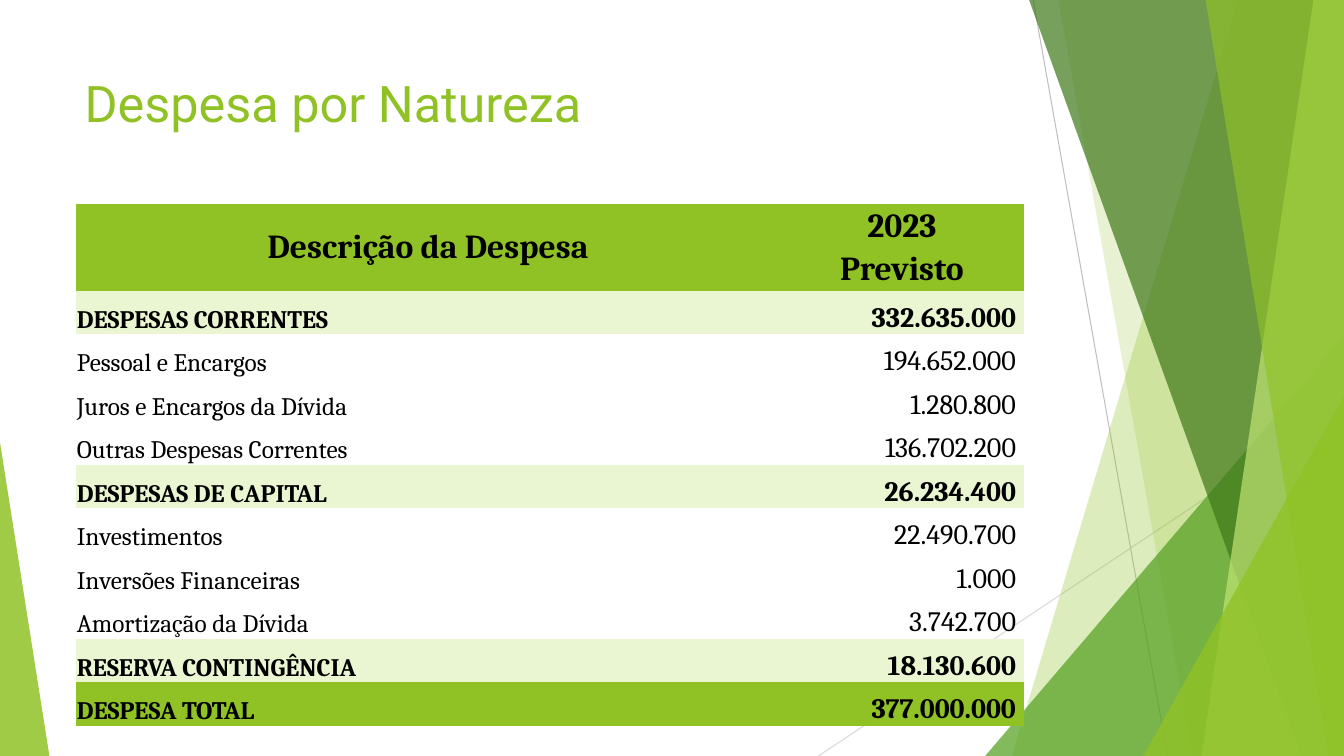
from dataclasses import dataclass
from typing import Any, NamedTuple, Optional

from lxml import etree
from pptx import Presentation
from pptx.dml.color import RGBColor
from pptx.enum.shapes import MSO_CONNECTOR, MSO_SHAPE
from pptx.enum.text import MSO_ANCHOR, PP_ALIGN
from pptx.oxml.ns import qn
from pptx.util import Pt

STRAIGHT = MSO_CONNECTOR.STRAIGHT
TRIANGLE = MSO_SHAPE.ISOSCELES_TRIANGLE
TOP, MIDDLE, BOTTOM = MSO_ANCHOR.TOP, MSO_ANCHOR.MIDDLE, MSO_ANCHOR.BOTTOM
LEFT, CENTER, RIGHT = PP_ALIGN.LEFT, PP_ALIGN.CENTER, PP_ALIGN.RIGHT

SLIDE_W, SLIDE_H = 960, 540
TITLE_ONLY = 5
NO_STYLE_NO_GRID = "{2D5ABB26-0587-4C30-8999-92F81FD0307C}"


@dataclass(frozen=True)
class Theme:
    green: str = "90C226"
    leaf: str = "54A021"
    forest: str = "3F7819"
    lime: str = "C0E474"
    pale: str = "EAF6D1"
    text: str = "000000"
    gray: str = "BFBFBF"
    light_gray: str = "D9D9D9"
    title_font: str = "Roboto"
    table_font: str = "Cambria"
    title_size: float = 36
    header_size: float = 24
    label_size: float = 18
    amount_size: float = 20


THEME = Theme()


class Ray(NamedTuple):
    start: tuple[float, float]
    end: tuple[float, float]
    color: str


class Band(NamedTuple):
    """A facet between a slanted left edge and the right side of the slide."""
    top_x: float
    bottom_x: float
    color: str
    opacity: int


class Corner(NamedTuple):
    """A right triangle standing on the bottom edge; peak is 0 (left) or 1 (right)."""
    left: float
    top: float
    width: float
    peak: float
    color: str
    opacity: int


class Expense(NamedTuple):
    label: str
    amount: str
    fill: Optional[str] = None


RAYS = [
    Ray((738, 0), (834, 540), THEME.gray),
    Ray((960, 290), (584.6, 540), THEME.light_gray),
]
FACETS = [
    Band(884.2, 722.9, THEME.green, 30),
    Band(756, 851.8, THEME.green, 20),
    Corner(703.7, 240, 256.3, 1, THEME.leaf, 72),
    Band(735.1, 929.5, THEME.forest, 70),
    Band(938.2, 858.2, THEME.lime, 70),
    Band(861.1, 949, THEME.green, 65),
    Corner(816.7, 283, 143.3, 1, THEME.green, 80),
    Corner(0, 316, 35.3, 0, THEME.green, 85),
]
EXPENSES = [
    Expense("DESPESAS CORRENTES", "332.635.000", THEME.pale),
    Expense("Pessoal e Encargos", "194.652.000"),
    Expense("Juros e Encargos da Dívida", "1.280.800"),
    Expense("Outras Despesas Correntes", "136.702.200"),
    Expense("DESPESAS DE CAPITAL", "26.234.400", THEME.pale),
    Expense("Investimentos", "22.490.700"),
    Expense("Inversões Financeiras", "1.000"),
    Expense("Amortização da Dívida", "3.742.700"),
    Expense("RESERVA CONTINGÊNCIA", "18.130.600", THEME.pale),
    Expense("DESPESA TOTAL", "377.000.000", THEME.green),
]
HEADER_ROWS = 2
TABLE_LEFT, TABLE_TOP = 54.2, 145.7
COLUMN_WIDTHS = (503, 174)
ROW_HEIGHT = 31.08
CELL_MARGINS = {"margin_left": Pt(0.7), "margin_top": Pt(0.7),
                "margin_right": Pt(0.7), "margin_bottom": Pt(0)}
AMOUNT_INSET = Pt(5.4)


def apply_format(target: Any, values: dict[str, Any]) -> None:
    for name, value in values.items():
        setattr(target, name, value)


def set_font(font: Any, face: str, size: float, color: str, bold: bool = False) -> None:
    apply_format(font, {"name": face, "size": Pt(size), "bold": bold})
    font.color.rgb = RGBColor.from_string(color)


def draw_ray(shapes: Any, ray: Ray) -> None:
    line = shapes.add_connector(STRAIGHT, *map(Pt, ray.start + ray.end))
    line.line.width = Pt(0.75)
    line.line.color.rgb = RGBColor.from_string(ray.color)
    etree.SubElement(line.element.spPr, qn("a:effectLst"))


def draw_facet(shapes: Any, facet: Band | Corner) -> None:
    if isinstance(facet, Band):
        builder = shapes.build_freeform(Pt(facet.top_x), Pt(0))
        outline = [(SLIDE_W, 0), (SLIDE_W, SLIDE_H), (facet.bottom_x, SLIDE_H)]
        builder.add_line_segments([(Pt(x), Pt(y)) for x, y in outline])
        shape = builder.convert_to_shape()
    else:
        shape = shapes.add_shape(TRIANGLE, Pt(facet.left), Pt(facet.top),
                                 Pt(facet.width), Pt(SLIDE_H - facet.top))
        shape.adjustments[0] = facet.peak
    shape.shadow.inherit = False
    shape.line.fill.background()
    shape.fill.solid()
    shape.fill.fore_color.rgb = RGBColor.from_string(facet.color)
    color = shape.element.spPr.find(f"{qn('a:solidFill')}/{qn('a:srgbClr')}")
    etree.SubElement(color, qn("a:alpha"), val=str(facet.opacity * 1000))


def fill_cell(cell: Any, text: str, size: float, align: Any, anchor: Any,
              fill: Optional[str]) -> None:
    apply_format(cell, CELL_MARGINS | {"vertical_anchor": anchor, "text": text})
    if align == RIGHT:
        cell.margin_right = AMOUNT_INSET
    if fill:
        cell.fill.solid()
        cell.fill.fore_color.rgb = RGBColor.from_string(fill)
    else:
        cell.fill.background()
    paragraph = cell.text_frame.paragraphs[0]
    paragraph.alignment = align
    set_font(paragraph.font, THEME.table_font, size, THEME.text, bool(fill))
    for run in paragraph.runs:
        set_font(run.font, THEME.table_font, size, THEME.text, bool(fill))


def draw_expense_table(shapes: Any) -> None:
    row_count = HEADER_ROWS + len(EXPENSES)
    frame = shapes.add_table(row_count, len(COLUMN_WIDTHS), Pt(TABLE_LEFT), Pt(TABLE_TOP),
                             Pt(sum(COLUMN_WIDTHS)), Pt(ROW_HEIGHT * row_count))
    table = frame.table
    apply_format(table, {"first_row": False, "horz_banding": False})
    next(frame.element.iter(qn("a:tableStyleId"))).text = NO_STYLE_NO_GRID
    for column, width in zip(table.columns, COLUMN_WIDTHS):
        column.width = Pt(width)
    for row in table.rows:
        row.height = Pt(ROW_HEIGHT)

    table.cell(0, 0).merge(table.cell(1, 0))
    headings = {(0, 0): "Descrição da Despesa", (0, 1): "2023", (1, 1): "Previsto"}
    for position, heading in headings.items():
        fill_cell(table.cell(*position), heading, THEME.header_size, CENTER, MIDDLE, THEME.green)
    for row, expense in enumerate(EXPENSES, HEADER_ROWS):
        fill_cell(table.cell(row, 0), expense.label, THEME.label_size, LEFT, BOTTOM, expense.fill)
        fill_cell(table.cell(row, 1), expense.amount, THEME.amount_size, RIGHT, BOTTOM,
                  expense.fill)


def write_title(title: Any) -> None:
    apply_format(title, {"left": Pt(53.3), "top": Pt(48.2),
                         "width": Pt(677), "height": Pt(104)})
    title.text_frame.text = "Despesa por Natureza"
    apply_format(title.text_frame, {"vertical_anchor": TOP, "word_wrap": True})
    paragraph = title.text_frame.paragraphs[0]
    paragraph.alignment = LEFT
    set_font(paragraph.runs[0].font, THEME.title_font, THEME.title_size, THEME.green)


def main() -> None:
    presentation = Presentation()
    apply_format(presentation, {"slide_width": Pt(SLIDE_W), "slide_height": Pt(SLIDE_H)})
    slide = presentation.slides.add_slide(presentation.slide_layouts[TITLE_ONLY])
    for ray in RAYS:
        draw_ray(slide.shapes, ray)
    for facet in FACETS:
        draw_facet(slide.shapes, facet)
    write_title(slide.shapes.title)
    draw_expense_table(slide.shapes)
    presentation.save("out.pptx")


if __name__ == "__main__":
    main()
